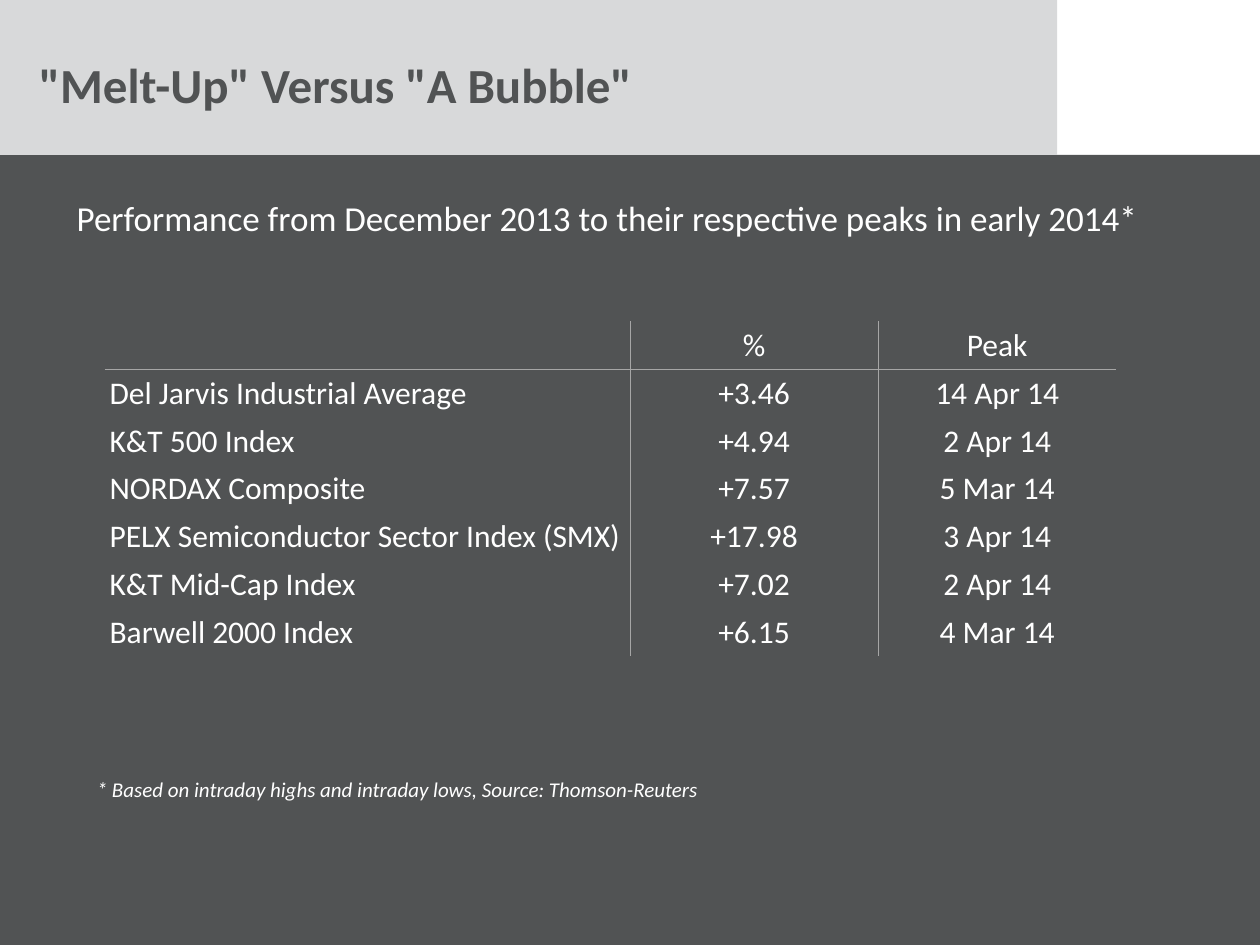
from lxml import etree
from pptx import Presentation
from pptx.dml.color import RGBColor
from pptx.enum import shapes, text
from pptx.oxml import ns
from pptx.util import Inches, Pt

FONT = "Calibri"
WHITE, DARK, PALE, RULE = "FFFFFF", "515354", "D8D9DA", "A6A6A6"
ROWS = [
    ("", "%", "Peak"),
    ("Del Jarvis Industrial Average", "+3.46", "14 Apr 14"),
    ("K&T 500 Index", "+4.94", "2 Apr 14"),
    ("NORDAX Composite", "+7.57", "5 Mar 14"),
    ("PELX Semiconductor Sector Index (SMX)", "+17.98", "3 Apr 14"),
    ("K&T Mid-Cap Index", "+7.02", "2 Apr 14"),
    ("Barwell 2000 Index", "+6.15", "4 Mar 14"),
]
COLUMN_WIDTHS = (4.17, 1.97, 1.89)
ROW_HEIGHT = 0.38


def color(hex_value):
    """Return the colour for a hex string."""
    return RGBColor.from_string(hex_value)


def write(frame, words, size=18, fill=WHITE, bold=False, italic=False, centered=False):
    """Write one formatted paragraph into a text frame."""
    paragraph = frame.paragraphs[0]
    paragraph.alignment = text.PP_ALIGN.CENTER if centered else text.PP_ALIGN.LEFT
    paragraph.font.size = Pt(size)
    if words:
        run = paragraph.add_run()
        run.text = words
        font = run.font
        font.name, font.size, font.bold, font.italic = FONT, Pt(size), bold, italic
        font.color.rgb = color(fill)


def add_panel(slide, left, top, width, height, fill):
    """Add a plain rectangle without an outline."""
    panel = slide.shapes.add_shape(
        shapes.MSO_SHAPE.RECTANGLE, Inches(left), Inches(top), Inches(width), Inches(height))
    panel.shadow.inherit = False
    panel.fill.solid()
    panel.fill.fore_color.rgb = color(fill)
    panel.line.fill.background()


def add_text(slide, left, top, width, height, words, anchor=text.MSO_ANCHOR.TOP, **style):
    """Add a wrapping text box with one paragraph."""
    frame = slide.shapes.add_textbox(
        Inches(left), Inches(top), Inches(width), Inches(height)).text_frame
    frame.word_wrap = True
    frame.vertical_anchor = anchor
    write(frame, words, **style)


def set_borders(cell, sides):
    """Draw thin rules on the given sides of a cell and clear the others."""
    properties = cell._tc.get_or_add_tcPr()
    for side in "LRTB":
        line = etree.SubElement(properties, ns.qn(f"a:ln{side}"), w=str(Pt(0.5)))
        if side in sides:
            solid = etree.SubElement(line, ns.qn("a:solidFill"))
            etree.SubElement(solid, ns.qn("a:srgbClr"), val=RULE)
        else:
            etree.SubElement(line, ns.qn("a:noFill"))


def add_header(slide, left, top, width, height):
    """Place the title on its pale band."""
    add_panel(slide, left, top, width, height, PALE)
    add_text(slide, left + 0.21, top + 0.04, 9, 1.25, '"Melt-Up" Versus "A Bubble"',
             anchor=text.MSO_ANCHOR.MIDDLE, size=28, fill=DARK, bold=True)


def add_performance_table(slide, left, top):
    """Place the index table with rules between columns and under the headings."""
    table = slide.shapes.add_table(
        len(ROWS), len(COLUMN_WIDTHS), Inches(left), Inches(top),
        Inches(sum(COLUMN_WIDTHS)), Inches(ROW_HEIGHT * len(ROWS))).table
    table.first_row = table.horz_banding = False
    for column, width in zip(table.columns, COLUMN_WIDTHS):
        column.width = Inches(width)
    last = len(COLUMN_WIDTHS) - 1
    for r, values in enumerate(ROWS):
        table.rows[r].height = Inches(ROW_HEIGHT)
        for c, value in enumerate(values):
            cell = table.cell(r, c)
            cell.margin_left = cell.margin_right = Inches(0.04)
            cell.margin_top = cell.margin_bottom = Inches(0.04)
            sides = ("L" if c else "") + ("R" if c < last else "")
            sides += "B" if r == 0 else "T" if r == 1 else ""
            set_borders(cell, sides)
            cell.fill.background()
            write(cell.text_frame, value, centered=c > 0)


def add_body(slide, left, top, width, height):
    """Place the dark panel with its heading, table and footnote."""
    add_panel(slide, left, top, width, height, DARK)
    add_text(slide, left + 0.32, top + 0.28, 9, 0.5,
             "Performance from December 2013 to their respective peaks in early 2014*",
             size=20, centered=True)
    add_performance_table(slide, left + 0.83, top + 1.32)
    add_text(slide, left + 0.67, top + 4.88, 5.59, 0.71,
             "* Based on intraday highs and intraday lows, Source: Thomson-Reuters",
             size=12, italic=True)


def main():
    """Build and save the slide."""
    deck = Presentation()
    deck.slide_width, deck.slide_height = Inches(10), Inches(7.5)
    slide = deck.slides.add_slide(deck.slide_layouts[6])
    add_body(slide, 0, 1.23, 10, 6.27)
    add_header(slide, 0, 0, 8.39, 1.23)
    deck.save("out.pptx")


if __name__ == "__main__":
    main()
